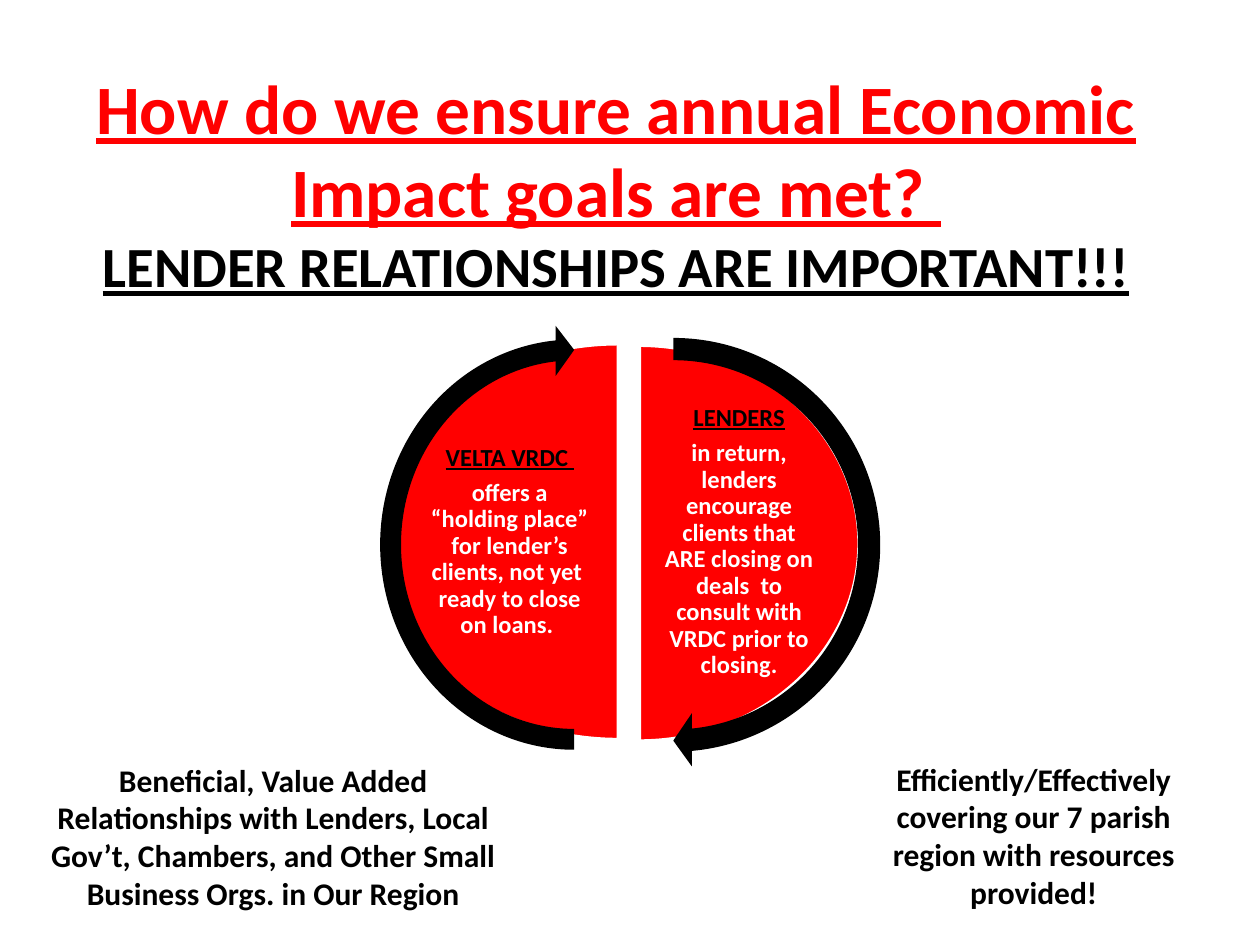
from pptx import Presentation
from pptx.dml.color import RGBColor
from pptx.enum.shapes import MSO_SHAPE
from pptx.enum.text import MSO_ANCHOR, MSO_AUTO_SIZE, PP_ALIGN
from pptx.util import Cm, Pt

PIE, ARROW = MSO_SHAPE.PIE, MSO_SHAPE.CIRCULAR_ARROW
MIDDLE, TOP = MSO_ANCHOR.MIDDLE, MSO_ANCHOR.TOP
CENTER = PP_ALIGN.CENTER
NO_AUTOFIT = MSO_AUTO_SIZE.NONE

THEME = {
    "font": "Calibri",
    "red": RGBColor(255, 0, 0),
    "black": RGBColor(0, 0, 0),
    "white": RGBColor(255, 255, 255),
    "title": 39.6,
    "subtitle": 32.4,
    "cycle": 14,
    "caption": 18,
}

TITLE_BOX = (0.71, 0.81, 23.42, 5.72)
TITLE_LINES = [
    ("How do we ensure annual Economic Impact goals are met? ", "title", "red"),
    ("LENDER RELATIONSHIPS ARE IMPORTANT!!!", "subtitle", "black"),
]

HALVES = [
    {
        "pie": (8.46, 6.96, 8.86, 7.98),
        "angles": (162, 54),
        "text": (13.31, 9.04, 3.18, 3.78),
        "heading": "LENDERS",
        "body": "in return, lenders encourage clients that ARE closing on deals  to "
                "consult with VRDC prior to closing.",
    },
    {
        "pie": (7.65, 6.93, 9.63, 7.98),
        "angles": (54, 162),
        "text": (8.56, 9.04, 3.43, 3.78),
        "heading": "VELTA VRDC ",
        "body": "offers a “holding place” for lender’s clients, not yet  ready to "
                "close on loans. ",
    },
]

ARROWS = [
    ((9.09, 6.5, 8.97, 8.97), 50.73, 162),
    ((7.37, 6.55, 8.41, 8.86), 158.73, 54),
]

CAPTIONS = [
    ((0.71, 15.21, 9.6, 3.33),
     "Beneficial, Value Added Relationships with Lenders, Local Gov’t, Chambers, "
     "and Other Small Business Orgs. in Our Region"),
    ((16.99, 15.19, 7.7, 3.33),
     "Efficiently/Effectively covering our 7 parish region with resources provided!"),
]


def lengths(box):
    return [Cm(value) for value in box]


def style_font(font, size, color, underline=False):
    font.name = THEME["font"]
    font.size = Pt(THEME[size])
    font.color.rgb = THEME[color]
    font.bold = True
    font.underline = underline


def add_title(slide):
    title = slide.shapes.title
    title.left, title.top, title.width, title.height = lengths(TITLE_BOX)
    frame = title.text_frame
    frame.auto_size = NO_AUTOFIT
    frame.vertical_anchor = MIDDLE
    paragraph = frame.paragraphs[0]
    paragraph.alignment = CENTER
    for index, (text, size, color) in enumerate(TITLE_LINES):
        if index:
            paragraph.add_line_break()
        run = paragraph.add_run()
        run.text = text
        style_font(run.font, size, color, underline=True)


def add_shape(slide, kind, box, adjustments, color):
    shape = slide.shapes.add_shape(kind, *lengths(box))
    for index, value in enumerate(adjustments):
        shape.adjustments[index] = value
    shape.shadow.inherit = False
    shape.fill.solid()
    shape.fill.fore_color.rgb = THEME[color]
    shape.line.fill.background()
    return shape


def add_text(slide, box, lines, size, anchor=TOP):
    frame = slide.shapes.add_textbox(*lengths(box)).text_frame
    frame.word_wrap = True
    frame.vertical_anchor = anchor
    for index, (text, color, underline) in enumerate(lines):
        paragraph = frame.add_paragraph() if index else frame.paragraphs[0]
        paragraph.text = text
        paragraph.alignment = CENTER
        style_font(paragraph.font, size, color, underline)
    return frame


def add_half(slide, half):
    pie = add_shape(slide, PIE, half["pie"], half["angles"], "red")
    pie.line.color.rgb = THEME["white"]
    pie.line.width = Pt(2)
    lines = [(half["heading"], "black", True), (half["body"], "white", False)]
    frame = add_text(slide, half["text"], lines, "cycle", MIDDLE)
    frame.margin_left = frame.margin_right = Cm(0.05)
    frame.margin_top = frame.margin_bottom = Cm(0.05)
    for paragraph in frame.paragraphs:
        paragraph.line_spacing = 0.9
        paragraph.space_after = Pt(0.35 * THEME["cycle"])


def main():
    presentation = Presentation()
    presentation.slide_width, presentation.slide_height = Cm(25.4), Cm(19.05)
    slide = presentation.slides.add_slide(presentation.slide_layouts[5])
    add_title(slide)
    for half in HALVES:
        add_half(slide, half)
    for box, end, start in ARROWS:
        add_shape(slide, ARROW, box, (0.05, 3.28, end, start, 0.06), "black")
    for box, text in CAPTIONS:
        add_text(slide, box, [(text, "black", False)], "caption")
    presentation.save("out.pptx")


if __name__ == "__main__":
    main()
